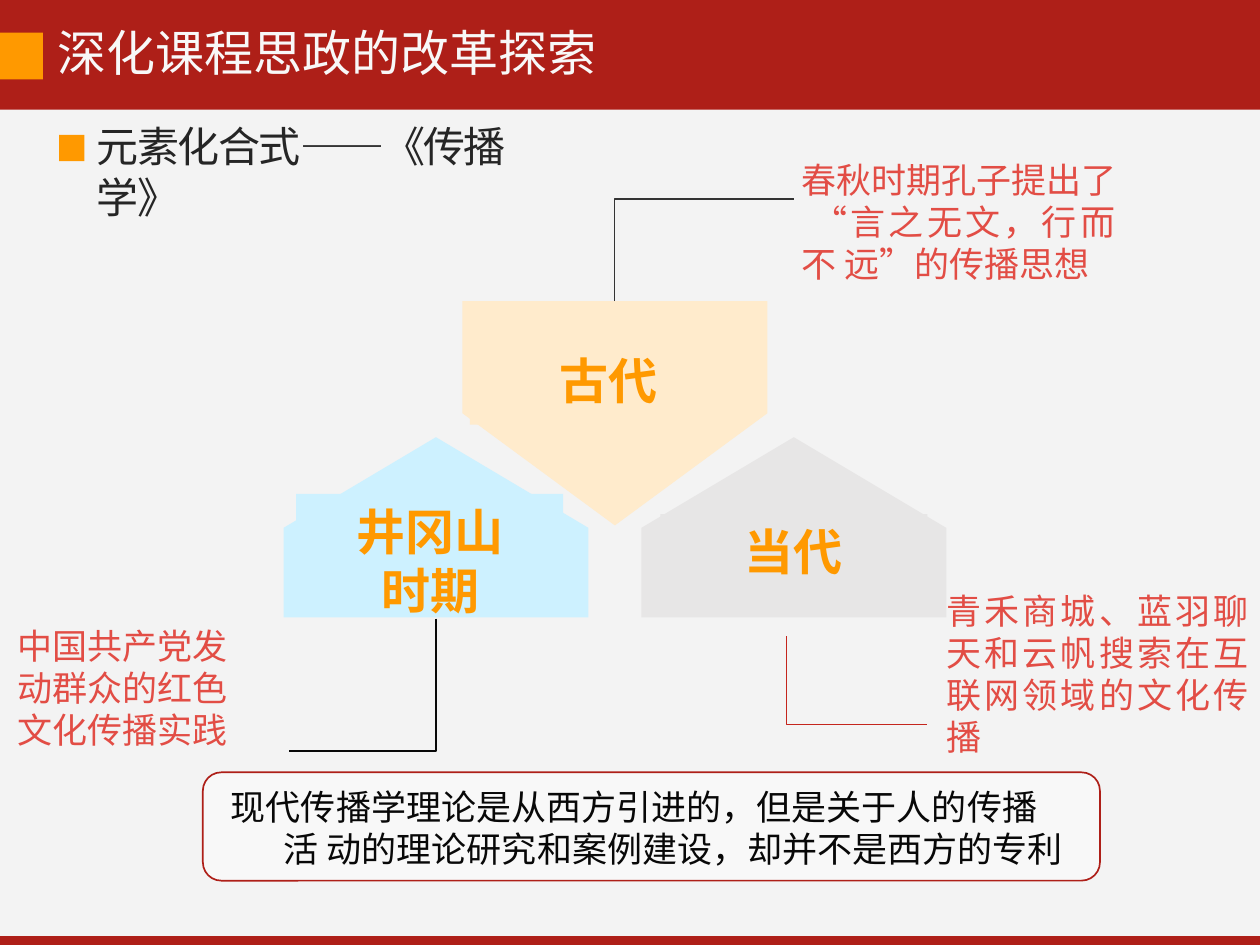
from dataclasses import dataclass
from itertools import groupby

from lxml import etree
from pptx import Presentation
from pptx.dml.color import RGBColor
from pptx.enum.shapes import MSO_SHAPE
from pptx.enum.text import MSO_ANCHOR, MSO_AUTO_SIZE, PP_ALIGN
from pptx.oxml.ns import qn
from pptx.util import Inches, Pt

RECTANGLE, ROUNDED = MSO_SHAPE.RECTANGLE, MSO_SHAPE.ROUNDED_RECTANGLE
LEFT, CENTER = PP_ALIGN.LEFT, PP_ALIGN.CENTER
TOP, MIDDLE = MSO_ANCHOR.TOP, MSO_ANCHOR.MIDDLE


@dataclass(frozen=True)
class Style:
    size: int
    color: str
    font: str = "Noto Sans CJK SC"
    bold: bool = False
    tracking: float = 0


class Theme:
    red, orange, paper, panel = "AE1F18", "FF9900", "F3F3F3", "F8F8F8"
    blue, grey, cream = "CDF1FF", "E7E6E6", "FFEBCC"
    line_height = 1.2
    dash_font = "Arial"
    title = Style(28, "F8F8F8")
    heading = Style(24, "252525", tracking=-0.9)
    label = Style(28, "FF9900", "Noto Sans CJK TC", True, 0.1)
    note = Style(20, "E24D45")
    loose_note = Style(20, "E24D45", tracking=1.8)
    caption = Style(20, "080808")


WIDTH, HEIGHT = 10, 7.5
PATH_UNITS = 100  # freeform points per inch

TITLE = "深化课程思政的改革探索"
HEADING = ["元素化合式——《传播", "学》"]
ANCIENT_NOTE = [
    ("春秋时期孔子提出了", Theme.note),
    (" “言之无文，行而", Theme.loose_note),
    ("不 远”的传播思想", Theme.note),
]
ANCIENT = "古代"
CAPTION = ["现代传播学理论是从西方引进的，但是关于人的传播",
           "活 动的理论研究和案例建设，却并不是西方的专利"]

# left, top, width, height, color
BLOCKS = [
    (0, 0, WIDTH, 0.87, Theme.red),
    (0, 7.43, WIDTH, 0.07, Theme.red),
    (0, 0.26, 0.34, 0.37, Theme.orange),
    (0.47, 1.07, 0.2, 0.21, Theme.orange),
]
# left, base, shoulder, tip, color, plate behind the label
PENTAGON_WIDTH = 2.42
PENTAGONS = [
    (2.25, 4.9, 4.19, 3.47, Theme.blue, (2.35, 3.92, 2.12, 0.54)),
    (5.09, 4.9, 4.19, 3.47, Theme.grey, (5.24, 4.08, 2.12, 0.54)),
    (3.67, 2.39, 3.28, 4.17, Theme.cream, (3.73, 2.7, 2.21, 0.67)),
]
LEADERS = [
    ([(4.88, 2.39), (4.88, 1.58), (6.3, 1.58)], "333333"),
    ([(3.46, 4.91), (3.46, 5.96), (2.29, 5.96)], "080808"),
    ([(6.24, 5.05), (6.24, 5.75), (7.36, 5.75)], "C4251D"),
]
# box, lines, style, alignment
TEXTS = [
    ((0.76, 0.95, 3.88, 0.85), HEADING, Theme.heading, LEFT),
    ((2.71, 3.97, 1.4, 0.96), ["井冈山", "时期"], Theme.label, CENTER),
    ((5.79, 4.13, 1, 0.49), ["当代"], Theme.label, CENTER),
    ((0.13, 4.95, 1.75, 1.03), ["中国共产党发", "动群众的红色", "文化传播实践"],
     Theme.note, LEFT),
    ((7.5, 4.67, 2.48, 1.36),
     ["青禾商城、蓝羽聊", "天和云帆搜索在互", "联网领域的文化传", "播"],
     Theme.loose_note, LEFT),
]


def paint(shape, fill=None, line=None, line_width=0.72):
    shape.shadow.inherit = False
    if fill:
        shape.fill.solid()
        shape.fill.fore_color.rgb = RGBColor.from_string(fill)
    else:
        shape.fill.background()
    if line:
        shape.line.color.rgb = RGBColor.from_string(line)
        shape.line.width = Pt(line_width)
    else:
        shape.line.fill.background()


def add_block(slide, box, fill, kind=RECTANGLE, **outline):
    shape = slide.shapes.add_shape(kind, *map(Inches, box))
    paint(shape, fill, **outline)
    return shape


def add_path(slide, points, closed, **colors):
    """Draw through points in inches; the builder keeps whole units only."""
    start, *others = [(round(x * PATH_UNITS), round(y * PATH_UNITS)) for x, y in points]
    builder = slide.shapes.build_freeform(*start, scale=Inches(1) / PATH_UNITS)
    builder.add_line_segments(others, close=closed)
    paint(builder.convert_to_shape(), **colors)


def place(shape, box):
    shape.left, shape.top, shape.width, shape.height = map(Inches, box)


def prepare(shape, anchor=TOP, left=0, right=0):
    settings = {
        "word_wrap": True, "auto_size": MSO_AUTO_SIZE.NONE,
        "vertical_anchor": anchor, "margin_left": Inches(left),
        "margin_right": Inches(right), "margin_top": Inches(0.01),
        "margin_bottom": 0,
    }
    frame = shape.text_frame
    for name, value in settings.items():
        setattr(frame, name, value)
    return frame


def write(paragraph, lines, alignment=LEFT, before=1, margin=0.01, indent=0):
    """Fill a paragraph with (text, style) lines; dashes get their own Latin font."""
    paragraph.alignment = alignment
    paragraph.space_before, paragraph.space_after = Pt(before), Pt(0)
    paragraph.line_spacing = Pt(lines[0][1].size * Theme.line_height)
    properties = paragraph._p.get_or_add_pPr()
    properties.set("marL", str(Inches(margin)))
    properties.set("indent", str(Inches(indent)))
    etree.SubElement(properties, qn("a:buNone"))
    for number, (text, style) in enumerate(lines):
        if number:
            paragraph.add_line_break()
        for is_dash, characters in groupby(text, lambda mark: mark == "—"):
            run = paragraph.add_run()
            run.text = "".join(characters)
            run.font.size, run.font.bold = Pt(style.size), style.bold
            run.font.color.rgb = RGBColor.from_string(style.color)
            run.font.name = Theme.dash_font if is_dash else style.font
            run_properties = run._r.get_or_add_rPr()
            run_properties.set("spc", str(round(style.tracking * 100)))
            etree.SubElement(run_properties, qn("a:ea"), typeface=style.font)


def styled(lines, style):
    return [(line, style) for line in lines]


def bring_to_front(shape):
    shape._element.getparent().append(shape._element)


def main():
    presentation = Presentation()
    presentation.slide_width, presentation.slide_height = Inches(WIDTH), Inches(HEIGHT)
    slide = presentation.slides.add_slide(presentation.slide_layouts[1])
    slide.background.fill.solid()
    slide.background.fill.fore_color.rgb = RGBColor.from_string(Theme.paper)

    for *box, color in BLOCKS:
        add_block(slide, box, color)
    for left, base, shoulder, tip, color, plate in PENTAGONS:
        right = left + PENTAGON_WIDTH
        points = [(left, base), (left, shoulder), (left + PENTAGON_WIDTH / 2, tip),
                  (right, shoulder), (right, base)]
        add_path(slide, points, True, fill=color)
        add_block(slide, plate, color)
    for points, color in LEADERS:
        add_path(slide, points, False, line=color)

    title, body = slide.shapes.title, slide.placeholders[1]
    place(title, (0.45, 0.17, 4.5, 0.49))
    write(prepare(title).paragraphs[0], [(TITLE, Theme.title)])
    place(body, (4.43, 1.25, 4.6, 2))
    frame = prepare(body)
    write(frame.paragraphs[0], ANCIENT_NOTE, margin=1.93)
    write(frame.add_paragraph(), [(ANCIENT, Theme.label)], before=37.5)
    bring_to_front(title)
    bring_to_front(body)

    for box, lines, style, alignment in TEXTS:
        text_box = slide.shapes.add_textbox(*map(Inches, box))
        write(prepare(text_box).paragraphs[0], styled(lines, style), alignment)

    caption = add_block(slide, (1.61, 6.13, 7.12, 0.86), Theme.panel, ROUNDED,
                        line=Theme.red, line_width=0.96)
    caption.adjustments[0] = 0.17
    frame = prepare(caption, MIDDLE, left=0.17)
    write(frame.paragraphs[0], styled(CAPTION, Theme.caption), margin=0.43, indent=-0.42)
    presentation.save("out.pptx")


if __name__ == "__main__":
    main()
